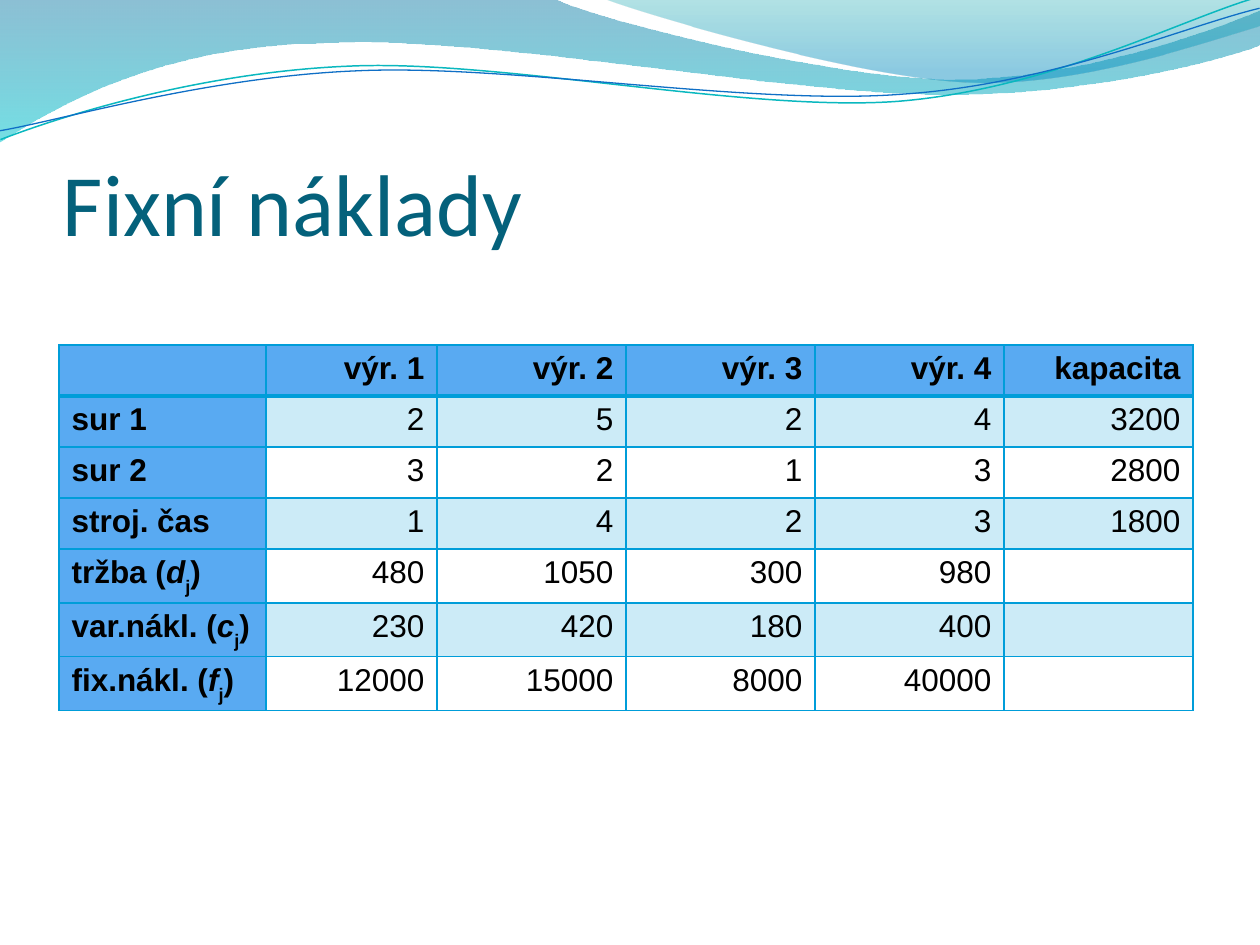
from dataclasses import dataclass
from typing import NamedTuple, Optional

from lxml import etree
from pptx import Presentation
from pptx.dml.color import RGBColor
from pptx.enum.text import MSO_ANCHOR, PP_ALIGN
from pptx.oxml.ns import qn
from pptx.util import Pt

BOTTOM = MSO_ANCHOR.BOTTOM
RIGHT, JUSTIFY = PP_ALIGN.RIGHT, PP_ALIGN.JUSTIFY
EMU_PER_PX = 914400 / 126


@dataclass(frozen=True)
class Theme:
    title: str = "04617B"
    text: str = "000000"
    heading_fill: str = "59AAF2"
    accent: str = "009DD9"
    band_opacity: int = 20
    title_font: str = "Calibri"
    table_font: str = "Arial"
    title_size: int = 50
    table_size: int = 18
    grid_width: int = 1
    header_rule_width: int = 2


class Stop(NamedTuple):
    position: float
    color: str
    opacity: int


class Stroke(NamedTuple):
    color: str
    width: float


@dataclass(frozen=True)
class Wave:
    """Segments hold 2 numbers for a line and 6 for a Bezier curve, in px."""
    start: tuple
    segments: tuple
    gradient: Optional[tuple] = None
    stroke: Optional[Stroke] = None
    rotation: float = 0


class Piece(NamedTuple):
    text: str
    italic: bool = False
    subscript: bool = False


class CostRow(NamedTuple):
    label: tuple
    values: tuple


THEME = Theme()
LINE_TILT = -2.7

WAVES = (
    Wave((0, 0), ((554, -1), (600, 21, 837, 79, 955, 79), (1075, 79, 1207, 33, 1260, 11),
                  (1261, 45), (1237, 55, 1096, 96, 940, 94), (783, 94, 481, 35, 324, 43),
                  (162, 45, 58, 105, -1, 142), (0, 0)),
         gradient=(Stop(0, "0074A1", 45), Stop(1, "00C6CF", 55))),
    Wave((604, -1), ((641, 14, 859, 78, 969, 82), (1079, 87, 1211, 40, 1260, 26),
                     (1260, 0), (604, -1)),
         gradient=(Stop(0, "00A1A9", 30), Stop(0.8, "008BBF", 45))),
    Wave((-2, 110), ((58, 90, 199, 52, 350, 53), (499, 53, 745, 118, 896, 114),
                     (1049, 109, 1184, 45, 1260, 27)),
         stroke=Stroke("0AB8BF", 0.85), rotation=LINE_TILT),
    Wave((-2, 101), ((57, 94, 207, 57, 357, 58), (509, 58, 750, 112, 902, 107),
                     (1052, 104, 1188, 52, 1262, 38)),
         stroke=Stroke("0F6FC6", 0.75), rotation=LINE_TILT),
)

COLUMN_WIDTHS = (207, 171) + (189,) * 4
ROW_HEIGHT = 51
HEADINGS = ("", "výr. 1", "výr. 2", "výr. 3", "výr. 4", "kapacita")


def indexed_label(name: str, symbol: str) -> tuple:
    return (Piece(f"{name} ("), Piece(symbol, italic=True),
            Piece("j", subscript=True), Piece(")"))


COST_ROWS = (
    CostRow((Piece("sur 1"),), (2, 5, 2, 4, 3200)),
    CostRow((Piece("sur 2"),), (3, 2, 1, 3, 2800)),
    CostRow((Piece("stroj. čas"),), (1, 4, 2, 3, 1800)),
    CostRow(indexed_label("tržba", "d"), (480, 1050, 300, 980, "")),
    CostRow(indexed_label("var.nákl.", "c"), (230, 420, 180, 400, "")),
    CostRow(indexed_label("fix.nákl.", "f"), (12000, 15000, 8000, 40000, "")),
)


def px(length: float) -> int:
    return round(length * EMU_PER_PX)


def set_opacity(color_element, percent: int) -> None:
    etree.SubElement(color_element, qn("a:alpha")).set("val", str(percent * 1000))


def add_run(paragraph, piece: Piece, color: str, **font_values) -> None:
    run = paragraph.add_run()
    run.text = piece.text
    for attribute, value in font_values.items():
        setattr(run.font, attribute, value)
    run.font.color.rgb = RGBColor.from_string(color)
    if piece.subscript:
        run._r.get_or_add_rPr().set("baseline", "-30000")


def bend_segments(ribbon, wave: Wave) -> None:
    """Merge the three lines of each curved segment into one Bezier curve."""
    lines = iter(list(ribbon._element.iter(qn("a:lnTo"))))
    for segment in wave.segments:
        line = next(lines)
        if len(segment) == 2:
            continue
        curve = etree.Element(qn("a:cubicBezTo"))
        line.addprevious(curve)
        for control in (line, next(lines), next(lines)):
            curve.append(control[0])
            control.getparent().remove(control)


def draw_wave(slide, wave: Wave) -> None:
    builder = slide.shapes.build_freeform(*map(px, wave.start))
    points = [(px(segment[i]), px(segment[i + 1]))
              for segment in wave.segments for i in range(0, len(segment), 2)]
    builder.add_line_segments(points, close=wave.gradient is not None)
    ribbon = builder.convert_to_shape()
    bend_segments(ribbon, wave)
    ribbon.rotation = wave.rotation
    ribbon.shadow.inherit = False
    if wave.gradient:
        ribbon.line.fill.background()
        ribbon.fill.gradient()
        ribbon.fill.gradient_angle = 270
        colors = ribbon._element.iter(qn("a:gs"))
        for target, stop, element in zip(ribbon.fill.gradient_stops, wave.gradient, colors):
            target.position = stop.position
            target.color.rgb = RGBColor.from_string(stop.color)
            set_opacity(element[0], stop.opacity)
    else:
        ribbon.fill.background()
        ribbon.line.color.rgb = RGBColor.from_string(wave.stroke.color)
        ribbon.line.width = Pt(wave.stroke.width)


def draw_title(slide, wording: str) -> None:
    frame = slide.shapes.add_textbox(px(63), px(97), px(1134), px(157)).text_frame
    frame_format = {"word_wrap": True, "vertical_anchor": BOTTOM, "margin_left": 0,
                    "margin_top": px(6), "margin_right": 0, "margin_bottom": 0}
    for attribute, value in frame_format.items():
        setattr(frame, attribute, value)
    add_run(frame.paragraphs[0], Piece(wording), THEME.title,
            name=THEME.title_font, size=Pt(THEME.title_size))


def draw_borders(cell, row: int) -> None:
    properties = cell._tc.get_or_add_tcPr()
    for side in "LRTB":
        is_header_rule = row == 0 and side == "B"
        width = THEME.header_rule_width if is_header_rule else THEME.grid_width
        border = etree.SubElement(properties, qn(f"a:ln{side}"), w=str(Pt(width)))
        fill = etree.SubElement(border, qn("a:solidFill"))
        etree.SubElement(fill, qn("a:srgbClr"), val=THEME.accent)


def fill_cell(cell, row: int, column: int) -> None:
    is_heading = row == 0 or column == 0
    if not is_heading and row % 2 == 0:
        cell.fill.background()
        return
    cell.fill.solid()
    cell.fill.fore_color.rgb = RGBColor.from_string(
        THEME.heading_fill if is_heading else THEME.accent)
    if not is_heading:
        set_opacity(cell._tc.tcPr.find(qn("a:solidFill"))[0], THEME.band_opacity)


def draw_cost_table(slide) -> None:
    lines = [[(Piece(heading),) for heading in HEADINGS]]
    lines += [[row.label, *((Piece(str(value)),) for value in row.values)] for row in COST_ROWS]
    table = slide.shapes.add_table(len(lines), len(HEADINGS), px(59), px(345),
                                   px(sum(COLUMN_WIDTHS)), px(ROW_HEIGHT * len(lines))).table
    for column, width in zip(table.columns, COLUMN_WIDTHS):
        column.width = px(width)
    for row, line in enumerate(lines):
        table.rows[row].height = px(ROW_HEIGHT)
        for column, pieces in enumerate(line):
            cell = table.cell(row, column)
            cell.margin_bottom = px(3)
            draw_borders(cell, row)
            fill_cell(cell, row, column)
            paragraph = cell.text_frame.paragraphs[0]
            paragraph.alignment = RIGHT if row == 0 or column else JUSTIFY
            for piece in filter(lambda part: part.text, pieces):
                add_run(paragraph, piece, THEME.text, name=THEME.table_font,
                        size=Pt(THEME.table_size), bold=row == 0 or column == 0,
                        italic=piece.italic)


def main() -> None:
    deck = Presentation()
    deck.slide_width, deck.slide_height = px(1260), px(945)
    slide = deck.slides.add_slide(deck.slide_layouts[6])
    for wave in WAVES:
        draw_wave(slide, wave)
    draw_title(slide, "Fixní náklady")
    draw_cost_table(slide)
    deck.save("out.pptx")


if __name__ == "__main__":
    main()
